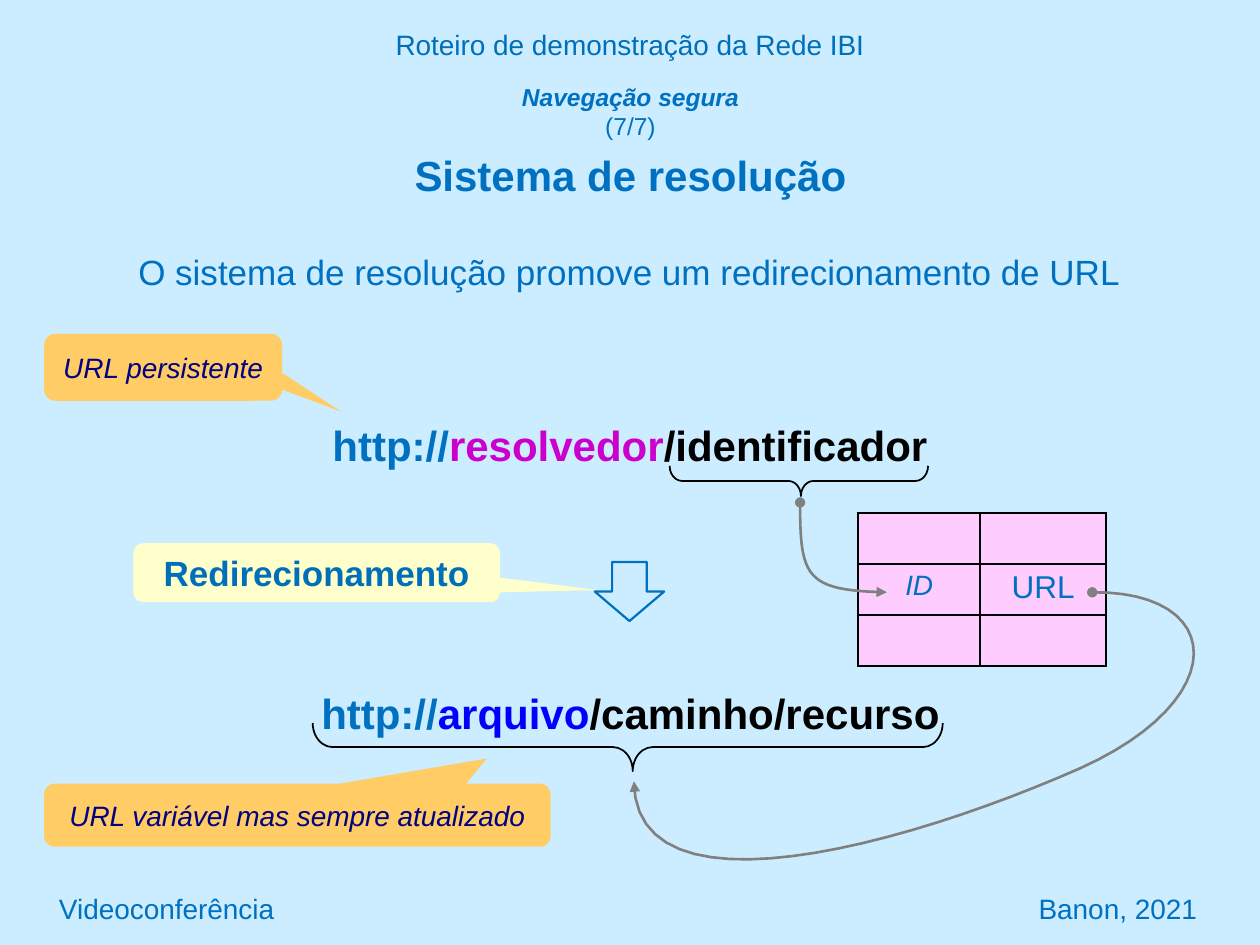
from dataclasses import dataclass

from lxml import etree
from pptx import Presentation
from pptx.dml.color import RGBColor
from pptx.enum.shapes import MSO_SHAPE
from pptx.enum.text import MSO_ANCHOR, PP_ALIGN
from pptx.oxml.ns import qn
from pptx.util import Cm, Pt

CALLOUT = MSO_SHAPE.ROUNDED_RECTANGULAR_CALLOUT
DOWN_ARROW = MSO_SHAPE.DOWN_ARROW
BRACE = MSO_SHAPE.LEFT_BRACE
LEFT, CENTER, RIGHT = PP_ALIGN.LEFT, PP_ALIGN.CENTER, PP_ALIGN.RIGHT
TOP, MIDDLE = MSO_ANCHOR.TOP, MSO_ANCHOR.MIDDLE


@dataclass(frozen=True)
class Theme:
    """Colours, font and type sizes of the slide."""
    font: str = "Arial"
    background: str = "CCECFF"
    blue: str = "0070C0"
    deep_blue: str = "006FBA"
    navy: str = "000080"
    link: str = "0000FF"
    magenta: str = "CC00CC"
    black: str = "000000"
    gray: str = "808080"
    orange: str = "FFCC66"
    yellow: str = "FFFFCC"
    pink: str = "FFCCFF"
    small: int = 14
    body: int = 16
    cell: int = 18
    large: int = 20
    title: int = 24


T = Theme()


def rgb(value):
    """Return the colour for a hex string."""
    return RGBColor.from_string(value)


def add_run(p, text, color=T.blue, **fmt):
    """Append a run with its font settings."""
    r = p.add_run()
    r.text = text
    r.font.color.rgb = rgb(color)
    for name, value in {"name": T.font, **fmt}.items():
        setattr(r.font, name, value)


def write(tf, runs, align=CENTER, anchor=TOP, wrap=True):
    """Fill the first paragraph of a text frame with runs."""
    for name, value in {"word_wrap": wrap, "vertical_anchor": anchor}.items():
        setattr(tf, name, value)
    p = tf.paragraphs[0]
    p.alignment = align
    for text, fmt in runs:
        add_run(p, text, **fmt)
    return p


def add_text(s, box, runs, **layout):
    """Add a text box and return its text frame."""
    tf = s.shapes.add_textbox(*map(Cm, box)).text_frame
    write(tf, runs, **layout)
    return tf


def add_heading(s):
    """Add the section name, its counter and the slide title."""
    tf = add_text(s, (1.9, 1.52, 21.62, 2.49),
                  [("Navegação segura", {"size": Pt(T.small), "bold": True, "italic": True})])
    p = tf.paragraphs[0]
    p.add_line_break()
    add_run(p, "(7/7)", size=Pt(T.small))
    p = tf.add_paragraph()
    p.alignment = CENTER
    p.space_before = Pt(5)
    add_run(p, "Sistema de resolução", size=Pt(T.title), bold=True)


def add_url(s, box, host, color, tail):
    """Add a URL whose parts have their own colours."""
    parts = (("http://", T.blue), (host, color), (tail, T.black))
    add_text(s, box, [(text, {"color": c, "size": Pt(T.title), "bold": True})
                      for text, c in parts])


def add_preset(s, kind, box, adjustments=(), fill=None, line=None, width=1):
    """Add a preset shape with flat fill and line."""
    sp = s.shapes.add_shape(kind, *map(Cm, box))
    for i, value in enumerate(adjustments):
        sp.adjustments[i] = value
    style(sp, fill, line, width)
    return sp


def style(sp, fill, line, width):
    """Set fill and line, and remove the shadow."""
    sp.shadow.inherit = False
    for part, color in ((sp.fill, fill), (sp.line.fill, line)):
        if color:
            part.solid()
            part.fore_color.rgb = rgb(color)
        else:
            part.background()
    if line:
        sp.line.width = Pt(width)


def add_callout(s, box, tip, fill, text, **fmt):
    """Add a rounded callout with its label."""
    sp = add_preset(s, CALLOUT, box, (*tip, 0.167), fill)
    write(sp.text_frame, [(text, fmt)], anchor=MIDDLE, wrap=False)


def add_brace(s, box):
    """Add a brace that points down."""
    add_preset(s, BRACE, box, (0.412, 0.508), line=T.black).rotation = 270


def bezier(start, c1, c2, end, steps=24):
    """Yield points along a cubic curve after its start."""
    for i in range(1, steps + 1):
        t = i / steps
        weights = ((1 - t) ** 3, 3 * t * (1 - t) ** 2, 3 * t * t * (1 - t), t ** 3)
        yield tuple(Cm(sum(w * p[axis] for w, p in zip(weights, (start, c1, c2, end))))
                    for axis in (0, 1))


def add_curve(s, start, *segments):
    """Add a curved link with a dot at its start and an arrow at its end."""
    builder = s.shapes.build_freeform(*map(Cm, start))
    for segment in segments:
        builder.add_line_segments(bezier(start, *segment), close=False)
        start = segment[-1]
    sp = builder.convert_to_shape()
    style(sp, None, T.gray, 1.5)
    ln = sp.line._get_or_add_ln()
    for tag, kind in (("a:headEnd", "oval"), ("a:tailEnd", "triangle")):
        etree.SubElement(ln, qn(tag), type=kind, w="med", len="med")


def add_borders(cell):
    """Draw thin black borders ahead of the cell fill."""
    pr = cell._tc.get_or_add_tcPr()
    for i, tag in enumerate(("a:lnL", "a:lnR", "a:lnT", "a:lnB")):
        ln = etree.Element(qn(tag), w=str(Pt(1)))
        fill = etree.SubElement(ln, qn("a:solidFill"))
        etree.SubElement(fill, qn("a:srgbClr"), val=T.black)
        pr.insert(i, ln)


def add_lookup_table(s, left, top, widths, height, labels):
    """Add the table that maps identifiers to URLs."""
    rows = 3
    box = (left, top, sum(widths), rows * height)
    table = s.shapes.add_table(rows, len(widths), *map(Cm, box)).table
    for column, width in zip(table.columns, widths):
        column.width = Cm(width)
    for cell in table.iter_cells():
        cell.fill.solid()
        cell.fill.fore_color.rgb = rgb(T.pink)
        add_borders(cell)
    for i, (text, fmt) in enumerate(labels):
        p = table.cell(1, i).text_frame.paragraphs[0]
        p.alignment = CENTER
        add_run(p, text, **fmt)


def main():
    """Build the slide and save it."""
    prs = Presentation()
    prs.slide_width, prs.slide_height = Cm(25.4), Cm(19.05)
    s = prs.slides.add_slide(prs.slide_layouts[6])
    s.background.fill.solid()
    s.background.fill.fore_color.rgb = rgb(T.background)

    body, large = Pt(T.body), Pt(T.large)
    add_text(s, (0, 0.43, 25.4, 0.94),
             [("Roteiro de demonstração da Rede IBI", {"size": body, "color": T.deep_blue})])
    for left, text, align in ((0.94, "Videoconferência", LEFT), (12.38, "Banon, 2021", RIGHT)):
        add_text(s, (left, 17.78, 12, 1.07), [(text, {"size": body})],
                 align=align, anchor=MIDDLE)
    add_heading(s)
    add_text(s, (2.34, 4.93, 20.7, 1.12),
             [("O sistema de resolução promove um redirecionamento de URL", {"size": large})])
    add_url(s, (5.33, 13.74, 14.76, 1.27), "arquivo", T.link, "/caminho/recurso")
    add_url(s, (6.35, 8.33, 12.7, 1.27), "resolvedor", T.magenta, "/identificador")

    note = {"size": body, "color": T.navy, "italic": True}
    add_callout(s, (0.89, 6.73, 4.8, 1.35), (0.747, 0.662), T.orange,
                "URL persistente", **note)
    add_callout(s, (0.89, 15.8, 10.21, 1.27), (0.374, -0.901), T.orange,
                "URL variável mas sempre atualizado", **note)
    add_callout(s, (2.69, 10.95, 7.39, 1.19), (0.766, 0.295), T.yellow,
                "Redirecionamento", size=large, color=T.deep_blue, bold=True)
    add_preset(s, DOWN_ARROW, (11.99, 11.33, 1.4, 1.19), line=T.blue, width=1.25)

    add_lookup_table(s, 17.3, 10.34, (2.46, 2.54), 1.03,
                     (("ID", {"size": body, "italic": True}), ("URL", {"size": Pt(T.cell)})))
    add_curve(s, (16.13, 10.13), ((16.13, 11.63), (16.23, 11.91), (17.88, 11.94)))
    add_curve(s, (22.02, 11.94), ((24.71, 11.91), (24.87, 14.1), (21.77, 15.49)),
              ((18.26, 17.04), (12.8, 18.57), (12.78, 15.75)))
    add_brace(s, (12.17, 8.71, 0.97, 12.7))
    add_brace(s, (15.8, 7.09, 0.61, 5.21))
    prs.save("out.pptx")


if __name__ == "__main__":
    main()
